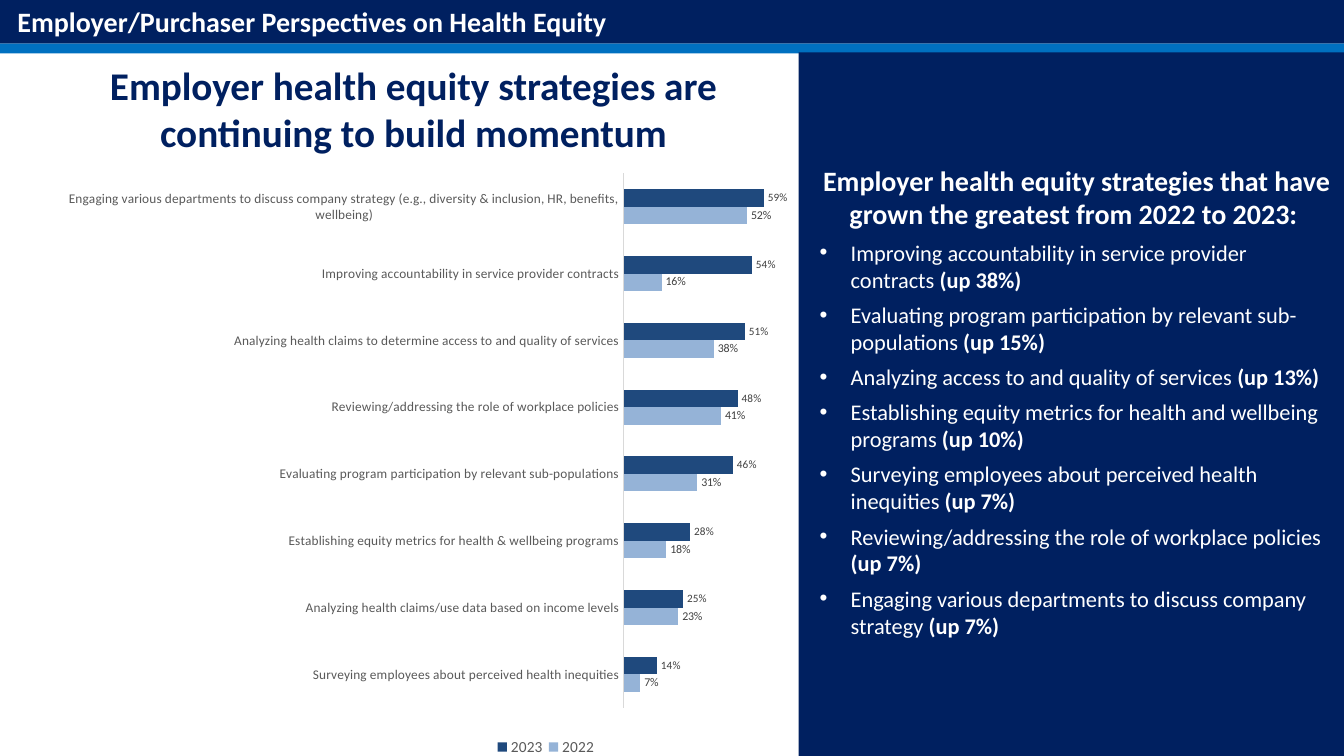
from lxml import etree
from pptx import Presentation
from pptx.chart import data as chart_data
from pptx.dml.color import RGBColor
from pptx.enum import chart as charts, shapes, text
from pptx.oxml import ns
from pptx.util import Inches, Pt

# Content
BANNER = "Employer/Purchaser Perspectives on Health Equity"
TITLE = "Employer health equity strategies are continuing to build momentum"
GROWTH_HEADING = ("Employer health equity strategies that have grown "
                  "the greatest from 2022 to 2023: ")
GROWTH = [
    ("Improving accountability in service provider contracts", "(up 38%)"),
    ("Evaluating program participation by relevant sub-populations", "(up 15%)"),
    ("Analyzing access to and quality of services", "(up 13%)"),
    ("Establishing equity metrics for health and wellbeing programs", "(up 10%)"),
    ("Surveying employees about perceived health inequities", "(up 7%)"),
    ("Reviewing/addressing the role of workplace policies", "(up 7%)"),
    ("Engaging various departments to discuss company strategy", "(up 7%)"),
]
# Strategy, 2022 share, 2023 share (drawn from the bottom up)
STRATEGIES = [
    ("Surveying employees about perceived health inequities", 0.07, 0.14),
    ("Analyzing health claims/use data based on income levels", 0.23, 0.25),
    ("Establishing equity metrics for health & wellbeing programs", 0.18, 0.28),
    ("Evaluating program participation by relevant sub-populations", 0.31, 0.46),
    ("Reviewing/addressing the role of workplace policies", 0.41, 0.48),
    ("Analyzing health claims to determine access to and quality of services",
     0.38, 0.51),
    ("Improving accountability in service provider contracts", 0.16, 0.54),
    ("Engaging various departments to discuss company strategy "
     "(e.g., diversity & inclusion, HR, benefits, wellbeing)", 0.52, 0.59),
]


class Theme:
    font = "Calibri"
    navy, blue, white = "002060", "0070C0", "FFFFFF"
    axis_text, label_text, axis_line = "595959", "404040", "D9D9D9"
    title, heading, body, legend, category = 28, 20, 16, 11, 9.5
    # Year: bar colour, label size
    years = {"2022": ("95B3D7", 8.5), "2023": ("1F497D", 8)}


# Lengths in inches: left, top, width, height
BANNER_BAR = (0, 0, 13.33, 0.43)
STRIPE = (0, 0.43, 13.33, 0.1)
PANEL = (7.92, 0.52, 5.41, 6.98)
BANNER_TEXT = (-0.38, 0, 6.95, 0.44)
TITLE_TEXT = (0.1, 0.56, 8, 1.04)
GROWTH_TEXT = (8.03, 1.57, 5.3, 4.86)
CHART = (0.25, 1.6, 7.71, 5.96)
# Shares of the chart
PLOT = {"x": 0.77, "y": 0.02, "w": 0.22, "h": 0.89}
LEGEND = {"x": 0.6, "y": 0.95, "w": 0.14, "h": 0.05}
INDENT = Inches(0.31)

prs = Presentation()
prs.slide_width, prs.slide_height = Inches(13.33), Inches(7.5)
slide = prs.slides.add_slide(prs.slide_layouts[6])


def inches(box):
    return [Inches(n) for n in box]


def style(font, size, color, bold=False):
    font.name, font.size, font.bold = Theme.font, Pt(size), bold
    font.color.rgb = RGBColor.from_string(color)


def add_block(box, color):
    block = slide.shapes.add_shape(shapes.MSO_SHAPE.RECTANGLE, *inches(box))
    block.shadow.inherit = False
    block.fill.solid()
    block.fill.fore_color.rgb = RGBColor.from_string(color)
    block.line.fill.background()


def add_heading(box, words, size, color):
    frame = slide.shapes.add_textbox(*inches(box)).text_frame
    frame.word_wrap = True
    heading = frame.paragraphs[0]
    heading.text = words
    heading.alignment = text.PP_ALIGN.CENTER
    style(heading.font, size, color, True)
    return frame


def fix_layout(part, position, settings):
    """Pin a chart part; position is where c:layout belongs in it."""
    for old_layout in part.findall(ns.qn("c:layout")):
        part.remove(old_layout)
    layout = etree.Element(ns.qn("c:layout"))
    manual = etree.SubElement(layout, ns.qn("c:manualLayout"))
    for tag, value in settings.items():
        etree.SubElement(manual, ns.qn("c:" + tag)).set("val", str(value))
    part.insert(position, layout)


# Banner, stripe and side panel
add_block(STRIPE, Theme.blue)
add_block(BANNER_BAR, Theme.navy)
add_block(PANEL, Theme.navy)
add_heading(BANNER_TEXT, BANNER, Theme.heading, Theme.white)
add_heading(TITLE_TEXT, TITLE, Theme.title, Theme.navy)

# Growth list
growth = add_heading(GROWTH_TEXT, GROWTH_HEADING, Theme.heading, Theme.white)
for strategy, rise in GROWTH:
    item = growth.add_paragraph()
    props = item._p.get_or_add_pPr()
    props.set("marL", str(INDENT))
    props.set("indent", str(-INDENT))
    etree.SubElement(props, ns.qn("a:buFont")).set("typeface", "Arial")
    etree.SubElement(props, ns.qn("a:buChar")).set("char", "•")
    item.space_before = Pt(6)
    style(item.font, Theme.body, Theme.white)
    item.add_run().text = strategy + " "
    rise_run = item.add_run()
    rise_run.text = rise
    rise_run.font.bold = True

# Chart data
names, *shares = zip(*STRATEGIES)
data = chart_data.CategoryChartData(number_format="0%")
data.categories = names
for year, values in zip(Theme.years, shares):
    data.add_series(year, values)
chart = slide.shapes.add_chart(
    charts.XL_CHART_TYPE.BAR_CLUSTERED, *inches(CHART), data).chart
style(chart.font, Theme.body, "000000")
chart.has_title = False

# Legend and axes
chart.has_legend = True
chart.legend.position = charts.XL_LEGEND_POSITION.BOTTOM
chart.legend.include_in_layout = False
style(chart.legend.font, Theme.legend, Theme.axis_text)
strategy_axis, share_axis = chart.category_axis, chart.value_axis
strategy_axis.major_tick_mark = charts.XL_TICK_MARK.NONE
strategy_axis.format.line.color.rgb = RGBColor.from_string(Theme.axis_line)
strategy_axis.format.line.width = Pt(0.75)
style(strategy_axis.tick_labels.font, Theme.category, Theme.axis_text)
share_axis.has_major_gridlines = False
share_axis.minimum_scale, share_axis.maximum_scale = 0, 0.72
share_axis.visible = False

# Bars and their labels
plot = chart.plots[0]
plot.gap_width, plot.overlap = 182, 0
plot.vary_by_categories = False
for bars, (color, label_size) in zip(plot.series, Theme.years.values()):
    bars.format.fill.solid()
    bars.format.fill.fore_color.rgb = RGBColor.from_string(color)
    labels = bars.data_labels
    labels.show_value = True
    labels.position = charts.XL_LABEL_POSITION.OUTSIDE_END
    labels.number_format, labels.number_format_is_linked = "0%", False
    style(labels.font, label_size, Theme.label_text)

# Fixed places, leaving the left side to the strategy names
edges = {"xMode": "edge", "yMode": "edge"}
fix_layout(chart._chartSpace.chart.plotArea, 0,
           {"layoutTarget": "inner", **edges, **PLOT})
fix_layout(chart.legend._element, 1, {**edges, **LEGEND})

prs.save("out.pptx")
